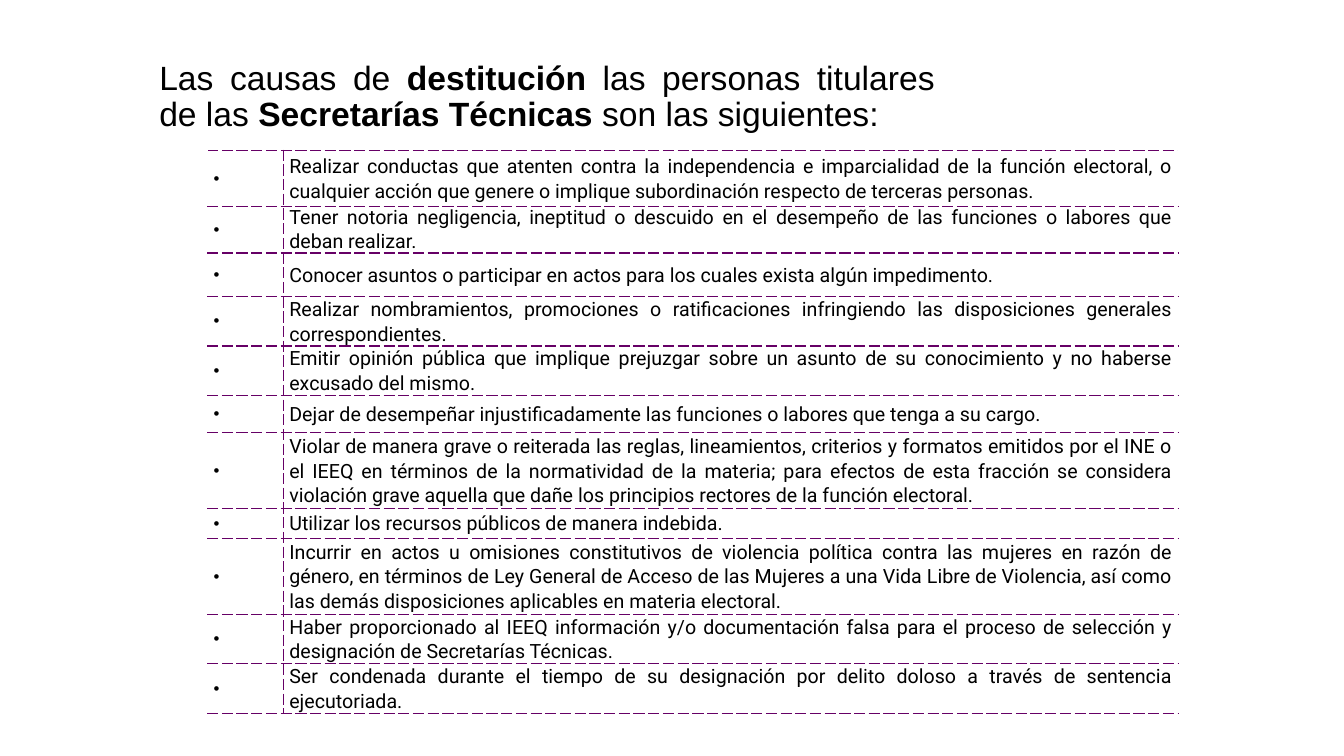
from lxml import etree
from pptx import Presentation
from pptx.dml.color import RGBColor
from pptx.enum.text import MSO_ANCHOR, PP_ALIGN
from pptx.oxml.ns import qn
from pptx.util import Inches, Pt

MIDDLE = MSO_ANCHOR.MIDDLE
JUSTIFY = PP_ALIGN.JUSTIFY
LEFT = PP_ALIGN.LEFT
TITLE_ONLY = 5

TITLE_RUNS = [
    ("Las causas de ", False),
    ("destitución", True),
    (" las personas titulares de las ", False),
    ("Secretarías Técnicas ", True),
    ("son las siguientes:", False),
]

CAUSES = [
    (0.56, 1.07, "Realizar conductas que atenten contra la independencia e imparcialidad de la función "
     "electoral, o cualquier acción que genere o implique subordinación respecto de terceras personas."),
    (0.45, 1.0, "Tener notoria negligencia, ineptitud o descuido en el desempeño de las funciones o "
     "labores que deban realizar."),
    (0.43, 1.07, "Conocer asuntos o participar en actos para los cuales exista algún impedimento."),
    (0.49, 1.07, "Realizar nombramientos, promociones o ratificaciones infringiendo las disposiciones "
     "generales correspondientes."),
    (0.49, 1.07, "Emitir opinión pública que implique prejuzgar sobre un asunto de su conocimiento y no "
     "haberse excusado del mismo."),
    (0.37, 1.07, "Dejar de desempeñar injustificadamente las funciones o labores que tenga a su cargo."),
    (0.75, 1.07, "Violar de manera grave o reiterada las reglas, lineamientos, criterios y formatos "
     "emitidos por el INE o el IEEQ en términos de la normatividad de la materia; para efectos de esta "
     "fracción se considera violación grave aquella que dañe los principios rectores de la función "
     "electoral."),
    (0.3, 1.07, "Utilizar los recursos públicos de manera indebida."),
    (0.75, 1.07, "Incurrir en actos u omisiones constitutivos de violencia política contra las mujeres en "
     "razón de género, en términos de Ley General de Acceso de las Mujeres a una Vida Libre de Violencia, "
     "así como las demás disposiciones aplicables en materia electoral."),
    (0.49, 1.07, "Haber proporcionado al IEEQ información y/o documentación falsa para el proceso de "
     "selección y designación de Secretarías Técnicas."),
    (0.49, 1.07, "Ser condenada durante el tiempo de su designación por delito doloso a través de "
     "sentencia ejecutoriada."),
]


def color(hex_code):
    """Turn a hex string into a colour."""
    return RGBColor.from_string(hex_code)


class CausesSlide:
    """Hold the style and the slide, and add its elements."""

    ink = "000000"
    rule = "660066"
    title_font = "Arial"
    body_font = "Roboto"

    def __init__(self, deck):
        """Add a title-only slide to the deck."""
        self.slide = deck.slides.add_slide(deck.slide_layouts[TITLE_ONLY])

    def run(self, paragraph, text, size, font, bold=False):
        """Append one formatted run."""
        run = paragraph.add_run()
        run.text = text
        run.font.size = Pt(size)
        run.font.name = font
        run.font.bold = bold
        run.font.color.rgb = color(self.ink)

    def title(self, left, top, width, height, runs):
        """Place and fill the title placeholder."""
        title = self.slide.shapes.title
        title.left, title.top = Inches(left), Inches(top)
        title.width, title.height = Inches(width), Inches(height)
        frame = title.text_frame
        frame.word_wrap = True
        frame.vertical_anchor = MIDDLE
        paragraph = frame.paragraphs[0]
        paragraph.alignment = JUSTIFY
        paragraph.line_spacing = 0.9
        for text, bold in runs:
            self.run(paragraph, text, 24, self.title_font, bold)

    def format_cell(self, cell, sides):
        """Clear the fill, set the margins and draw dashed borders."""
        cell.vertical_anchor = MIDDLE
        cell.margin_left = cell.margin_right = Inches(0.06)
        cell.margin_top = cell.margin_bottom = 0
        cell.fill.background()
        properties = cell._tc.get_or_add_tcPr()
        for position, side in enumerate(sides):
            line = etree.Element(qn(f"a:ln{side}"), w=str(Pt(1)))
            fill = etree.SubElement(line, qn("a:solidFill"))
            etree.SubElement(fill, qn("a:srgbClr"), val=self.rule)
            etree.SubElement(line, qn("a:prstDash"), val="dash")
            properties.insert(position, line)

    def bullet_cell(self, cell):
        """Fill a cell with a lone bullet."""
        self.format_cell(cell, "RTB")
        paragraph = cell.text_frame.paragraphs[0]
        paragraph.alignment = LEFT
        properties = paragraph._p.get_or_add_pPr()
        properties.set("marL", str(Inches(0.25)))
        properties.set("indent", str(-Inches(0.25)))
        etree.SubElement(properties, qn("a:buFont"), typeface=self.title_font)
        etree.SubElement(properties, qn("a:buChar"), char="•")
        self.run(paragraph, " ", 12, self.title_font)

    def cause_cell(self, cell, text, spacing):
        """Fill a cell with the text of one cause."""
        self.format_cell(cell, "LTB")
        paragraph = cell.text_frame.paragraphs[0]
        paragraph.alignment = JUSTIFY
        paragraph.line_spacing = spacing
        if spacing > 1:
            paragraph.space_after = Pt(8)
        self.run(paragraph, text, 14, self.body_font)

    def causes_table(self, left, top, widths, causes):
        """Add the table with a bullet and a text for each cause."""
        height = sum(row_height for row_height, _, _ in causes)
        table = self.slide.shapes.add_table(
            len(causes), len(widths), Inches(left), Inches(top), Inches(sum(widths)), Inches(height)
        ).table
        table.first_row = table.horz_banding = False
        for column, width in zip(table.columns, widths):
            column.width = Inches(width)
        for index, (row_height, spacing, text) in enumerate(causes):
            table.rows[index].height = Inches(row_height)
            self.bullet_cell(table.cell(index, 0))
            self.cause_cell(table.cell(index, 1), text, spacing)


def main():
    """Build and save the slide."""
    deck = Presentation()
    deck.slide_width, deck.slide_height = Inches(13.33), Inches(7.5)
    page = CausesSlide(deck)
    page.title(1.48, 0.52, 7.89, 0.9, TITLE_RUNS)
    page.causes_table(2.06, 1.49, [0.75, 8.88], CAUSES)
    deck.save("out.pptx")


if __name__ == "__main__":
    main()
